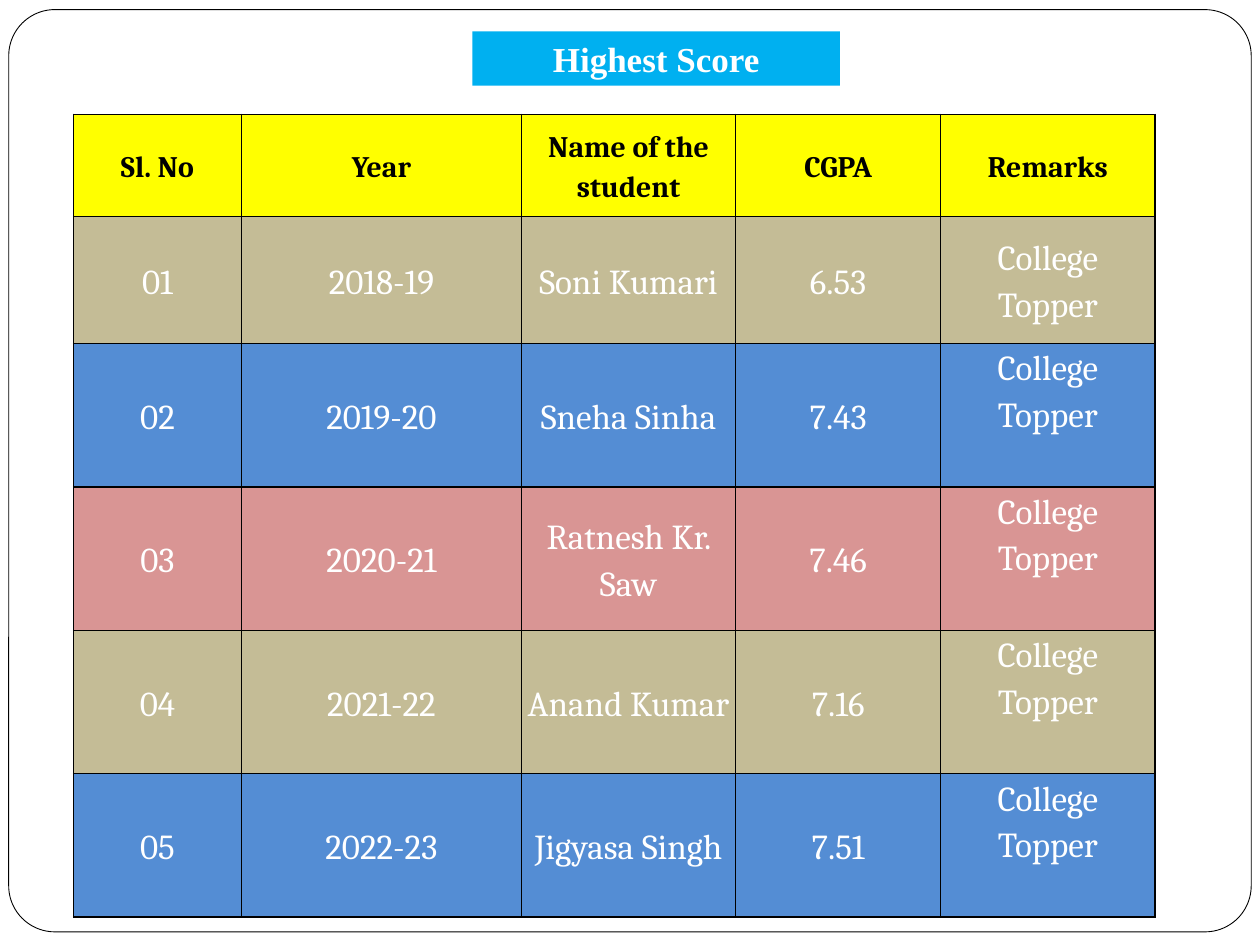
from pptx import Presentation
from pptx.dml.color import RGBColor
from pptx.enum.shapes import MSO_SHAPE
from pptx.enum.text import MSO_ANCHOR, PP_ALIGN
from pptx.oxml import parse_xml
from pptx.oxml.ns import nsdecls
from pptx.util import Pt

COLORS = {"white": "FFFFFF", "black": "000000", "banner": "00B0F0", "header": "FFFF00",
          "tan": "C4BC96", "blue": "548DD4", "rose": "D99594"}
HEADINGS = ["Sl. No", "Year", "Name of the student", "CGPA", "Remarks"]
TOPPERS = [("2018-19", "Soni Kumari", "6.53"), ("2019-20", "Sneha Sinha", "7.43"),
           ("2020-21", "Ratnesh Kr. Saw", "7.46"), ("2021-22", "Anand Kumar", "7.16"),
           ("2022-23", "Jigyasa Singh", "7.51")]
BANDS = ["tan", "blue", "rose"]
COLUMN_WIDTHS = [96, 160, 122.4, 117.2, 122.4]
ROW_HEIGHTS = [58.2, 72.6] + [78.5] * 4
HEADER_FONT = {"name": "Cambria", "size": Pt(17), "bold": True}
BODY_FONT = {"name": "Cambria", "size": Pt(20), "bold": False}
BANNER_FONT = {"name": "Times New Roman", "size": Pt(20), "bold": True}
CELL_FORMAT = {"vertical_anchor": MSO_ANCHOR.MIDDLE, "margin_left": Pt(3),
               "margin_right": Pt(3), "margin_top": 0, "margin_bottom": 0}


def rgb(name):
    """Return the named colour."""
    return RGBColor.from_string(COLORS[name])


def apply_format(target, values):
    """Set every attribute in values on target."""
    for name, value in values.items():
        setattr(target, name, value)


def write_text(text_frame, text, font, color, line_spacing=1.0):
    """Write one centred paragraph."""
    paragraph = text_frame.paragraphs[0]
    apply_format(paragraph, {"alignment": PP_ALIGN.CENTER, "line_spacing": line_spacing})
    run = paragraph.add_run()
    run.text = text
    apply_format(run.font, font)
    run.font.color.rgb = rgb(color)


def add_box(slide, kind, box, fill):
    """Add a plain filled shape without shadow or line."""
    shape = slide.shapes.add_shape(kind, *map(Pt, box))
    shape.shadow.inherit = False
    shape.fill.solid()
    shape.fill.fore_color.rgb = rgb(fill)
    shape.line.fill.background()
    return shape


def add_frame(slide, box):
    """Add the rounded frame around the slide."""
    frame = add_box(slide, MSO_SHAPE.ROUNDED_RECTANGLE, box, "white")
    frame.adjustments[0] = 0.05
    frame.line.color.rgb = rgb("black")
    frame.line.width = Pt(0.5)


def add_banner(slide, box, text):
    """Add the title banner."""
    banner = add_box(slide, MSO_SHAPE.RECTANGLE, box, "banner")
    apply_format(banner.text_frame, {"word_wrap": True, "vertical_anchor": MSO_ANCHOR.MIDDLE})
    write_text(banner.text_frame, text, BANNER_FONT, "white")


def style_cell(cell, fill):
    """Give a cell its margins, borders and fill."""
    apply_format(cell, CELL_FORMAT)
    properties = cell._tc.get_or_add_tcPr()
    for side in ("lnL", "lnR", "lnT", "lnB"):
        properties.append(parse_xml(
            f'<a:{side} {nsdecls("a")} w="{Pt(1)}"><a:solidFill>'
            f'<a:srgbClr val="{COLORS["black"]}"/></a:solidFill></a:{side}>'))
    cell.fill.solid()
    cell.fill.fore_color.rgb = rgb(fill)


def add_score_table(slide, left, top):
    """Add the table of toppers at the given corner."""
    rows = [HEADINGS] + [(f"{number:02}", *topper, "College Topper")
                         for number, topper in enumerate(TOPPERS, 1)]
    size = sum(COLUMN_WIDTHS), sum(ROW_HEIGHTS)
    table = slide.shapes.add_table(len(rows), len(HEADINGS),
                                   *map(Pt, (left, top, *size))).table
    for column, width in zip(table.columns, COLUMN_WIDTHS):
        column.width = Pt(width)
    for index, (row, height, texts) in enumerate(zip(table.rows, ROW_HEIGHTS, rows)):
        row.height = Pt(height)
        fill = BANDS[(index - 1) % len(BANDS)] if index else "header"
        font, color = (BODY_FONT, "white") if index else (HEADER_FONT, "black")
        for cell, text in zip(row.cells, texts):
            style_cell(cell, fill)
            write_text(cell.text_frame, text, font, color, 1.15)
        if index > 1:
            row.cells[len(HEADINGS) - 1].margin_bottom = Pt(29)


def main():
    """Build and save the slide."""
    presentation = Presentation()
    apply_format(presentation, {"slide_width": Pt(720), "slide_height": Pt(540)})
    slide = presentation.slides.add_slide(presentation.slide_layouts[6])
    add_frame(slide, (5, 5.5, 710, 527))
    add_banner(slide, (270, 18, 210, 31), "Highest Score")
    add_score_table(slide, 42, 65.4)
    presentation.save("out.pptx")


if __name__ == "__main__":
    main()
